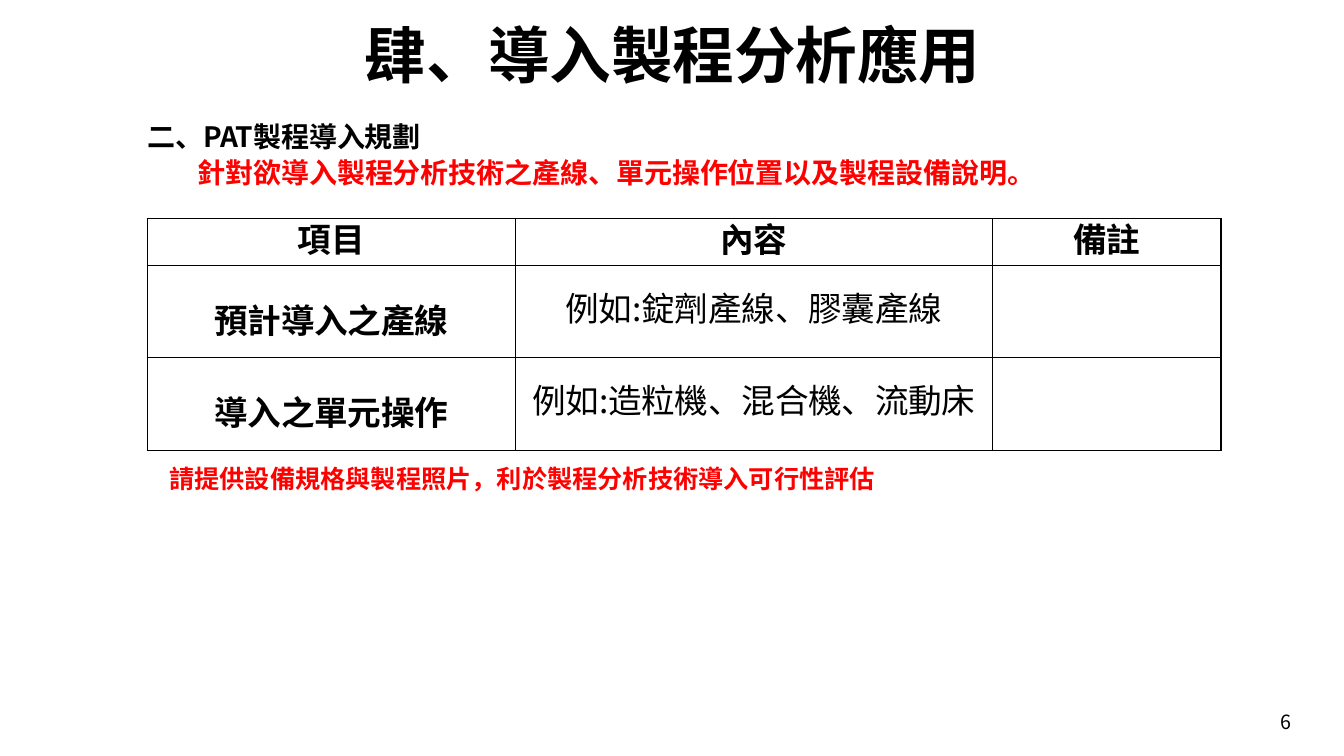
from lxml import etree
from pptx import Presentation
from pptx.dml.color import RGBColor
from pptx.enum import text as t
from pptx.oxml import ns
from pptx.util import Inches, Pt

HUES = {"ink": "000000", "red": "FF0000", "paper": "FFFFFF"}
SANS = "Noto Sans CJK SC"
HEAD = ("項目", "內容", "備註")
ROWS = (
    ("預計導入之產線", "例如:錠劑產線、膠囊產線", ""),
    ("導入之單元操作", "例如:造粒機、混合機、流動床", ""),
)


def rgb(hue):
    return RGBColor.from_string(HUES[hue])


def put(par, words, size, hue="ink", bold=True, face=SANS, gap=None):
    """Add one styled run; gap is the letter spacing in points."""
    run = par.add_run()
    run.text = words
    for key, value in {"size": Pt(size), "bold": bold, "name": face}.items():
        setattr(run.font, key, value)
    run.font.color.rgb = rgb(hue)
    props = run._r.get_or_add_rPr()
    etree.SubElement(props, ns.qn("a:ea")).set("typeface", face)
    if gap:
        props.set("spc", str(round(gap * 100)))


def pad(area, sides):
    for side, size in zip(("left", "top", "right", "bottom"), sides):
        setattr(area, "margin_" + side, Inches(size))


def frame(slide, box, sides=(0, 0.01, 0, 0), wrap=True):
    """Add a text box and return its text frame."""
    area = slide.shapes.add_textbox(*map(Inches, box)).text_frame
    area.word_wrap = wrap
    area.auto_size = t.MSO_AUTO_SIZE.SHAPE_TO_FIT_TEXT
    pad(area, sides)
    return area


def title(slide, box):
    put(frame(slide, box).paragraphs[0], "肆、導入製程分析應用", 44, gap=-0.1)


def intro(slide, box):
    area = frame(slide, box)
    put(area.paragraphs[0], "二、PAT製程導入規劃", 20, gap=-0.1)
    par = area.add_paragraph()
    par.space_before = Pt(1.1)
    put(par, "\t針對欲導入製程分析技術之產線、單元操作位置以及製程設備說明。",
        20, "red", gap=-0.1)


def border(cell):
    props = cell._tc.get_or_add_tcPr()
    for spot, side in enumerate(("lnL", "lnR", "lnT", "lnB")):
        line = etree.Element(ns.qn("a:" + side), w=str(Pt(1)))
        fill = etree.SubElement(line, ns.qn("a:solidFill"))
        etree.SubElement(fill, ns.qn("a:srgbClr"), val=HUES["ink"])
        props.insert(spot, line)


def plan(slide, box):
    """Draw the planning table; body rows are twice the header's height."""
    data = (HEAD,) + ROWS
    grid = slide.shapes.add_table(len(data), len(HEAD), *map(Inches, box)).table
    grid.first_row = grid.horz_banding = False
    for col, width in zip(grid.columns, (3.65, 4.73, 2.27)):
        col.width = Inches(width)
    unit = box[3] / (1 + 2 * len(ROWS))
    for r, words in enumerate(data):
        grid.rows[r].height = Inches(unit * (2 if r else 1))
        for c, word in enumerate(words):
            cell = grid.cell(r, c)
            cell.fill.solid()
            cell.fill.fore_color.rgb = rgb("paper")
            border(cell)
            cell.vertical_anchor = t.MSO_ANCHOR.MIDDLE
            top = 0.01 if r == 0 else 0.24 if c == 0 else 0
            pad(cell, (0, top, 0, 0))
            if word:
                par = cell.text_frame.paragraphs[0]
                par.alignment = t.PP_ALIGN.CENTER
                par.line_spacing = Pt(27.8)
                put(par, word, 24, bold=r == 0 or c == 0, gap=-0.2)


def note(slide, box):
    area = frame(slide, box, (0.1, 0.05, 0.1, 0.05), wrap=False)
    put(area.paragraphs[0], "請提供設備規格與製程照片，利於製程分析技術導入可行性評估",
        18, "red", face="Calibri")


def folio(slide, box):
    """Add the page number."""
    area = frame(slide, box, (0, 0.03, 0, 0))
    put(area.paragraphs[0], "6", 14, bold=False, gap=-0.2)


def main():
    deck = Presentation()
    deck.slide_width, deck.slide_height = Inches(13.33), Inches(7.5)
    slide = deck.slides.add_slide(deck.slide_layouts[6])
    left, width = 1.46, 10.65
    title(slide, (3.62, 0.16, 6.32, 0.75))
    folio(slide, (12.7, 7.01, 0.3, 0.29))
    intro(slide, (left, 1.18, width, 0.7))
    plan(slide, (left, 2.17, width, 2.3))
    note(slide, (1.58, 4.55, 7.27, 0.4))
    deck.save("out.pptx")


if __name__ == "__main__":
    main()
